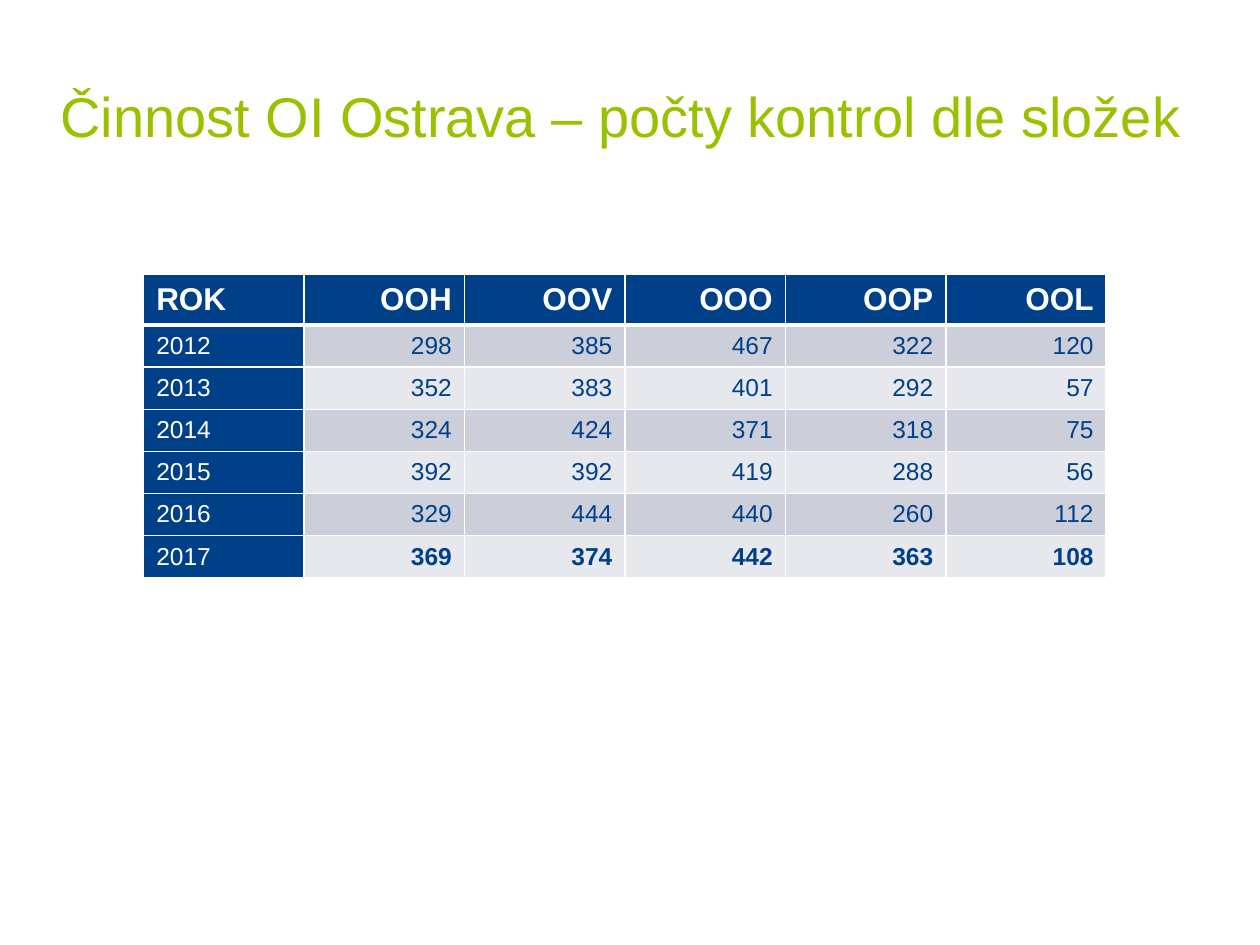
from dataclasses import dataclass

from lxml.etree import SubElement
from pptx import Presentation
from pptx.dml.color import RGBColor as Rgb
from pptx.enum.text import MSO_ANCHOR as Anchor, PP_ALIGN as Align
from pptx.oxml.ns import qn
from pptx.util import Inches, Pt

WIDTH, HEIGHT = Inches(10), Inches(7.5)
HEADINGS = ("ROK", "OOH", "OOV", "OOO", "OOP", "OOL")
INSPECTIONS = (
    (2012, 298, 385, 467, 322, 120),
    (2013, 352, 383, 401, 292, 57),
    (2014, 324, 424, 371, 318, 75),
    (2015, 392, 392, 419, 288, 56),
    (2016, 329, 444, 440, 260, 112),
    (2017, 369, 374, 442, 363, 108),
)


@dataclass(frozen=True)
class Theme:
    """Colours, font and point sizes of the slide."""
    font: str = "Arial"
    green: str = "99C100"
    navy: str = "004089"
    white: str = "FFFFFF"
    bands: tuple = ("E7E8ED", "CCCFDA")
    title: int = 32
    heading: int = 18
    body: int = 14
    rule: int = 1
    heavy_rule: int = 3


THEME = Theme()


def place(left, top, width, height):
    """Turn percentages of the slide into a position and size."""
    return (int(WIDTH * left / 100), int(HEIGHT * top / 100),
            int(WIDTH * width / 100), int(HEIGHT * height / 100))


def write(frame, text, size, color, align, bold=False):
    """Add one styled run to the first paragraph of a frame."""
    paragraph = frame.paragraphs[0]
    paragraph.alignment = align
    run = paragraph.add_run()
    run.text = str(text)
    run.font.name = THEME.font
    run.font.size = Pt(size)
    run.font.bold = bold
    run.font.color.rgb = Rgb.from_string(color)


def add_title(slide, text):
    """Add the centred slide title."""
    title = slide.shapes.add_textbox(*place(3.5, 3.87, 91.6, 16.67))
    title.text_frame.word_wrap = True
    title.text_frame.vertical_anchor = Anchor.MIDDLE
    write(title.text_frame, text, THEME.title, THEME.green, Align.CENTER)


def rule_cell(cell, top, bottom):
    """Draw white rules round a cell."""
    properties = cell._tc.get_or_add_tcPr()
    sides = {"L": THEME.rule, "R": THEME.rule, "T": top, "B": bottom}
    for side, weight in sides.items():
        line = SubElement(properties, qn(f"a:ln{side}"), w=str(Pt(weight)))
        fill = SubElement(line, qn("a:solidFill"))
        SubElement(fill, qn("a:srgbClr"), val=THEME.white)


def style_cell(cell, text, row, column):
    """Fill a cell with its text, band colour and rules."""
    is_heading, is_label = row == 0, column == 0
    is_dark = is_heading or is_label
    is_latest = row == len(INSPECTIONS) and not is_label
    rule_cell(cell,
              THEME.heavy_rule if row == 1 else THEME.rule,
              THEME.heavy_rule if is_heading else THEME.rule)
    cell.fill.solid()
    cell.fill.fore_color.rgb = Rgb.from_string(
        THEME.navy if is_dark else THEME.bands[row % 2])
    cell.vertical_anchor = Anchor.MIDDLE
    write(cell.text_frame, text,
          THEME.heading if is_heading else THEME.body,
          THEME.white if is_dark else THEME.navy,
          Align.LEFT if is_label else Align.RIGHT,
          is_heading or is_latest)


def add_inspections(slide):
    """Add the table of inspections by year and unit."""
    records = (HEADINGS, *INSPECTIONS)
    table = slide.shapes.add_table(
        len(records), len(HEADINGS), *place(11.4, 29.07, 76.4, 28)).table
    for row, record in enumerate(records):
        for column, value in enumerate(record):
            style_cell(table.cell(row, column), value, row, column)


def main():
    """Build and save the slide."""
    deck = Presentation()
    deck.slide_width, deck.slide_height = WIDTH, HEIGHT
    slide = deck.slides.add_slide(deck.slide_layouts[6])
    add_title(slide, "Činnost OI Ostrava – počty kontrol dle složek")
    add_inspections(slide)
    deck.save("out.pptx")


if __name__ == "__main__":
    main()
